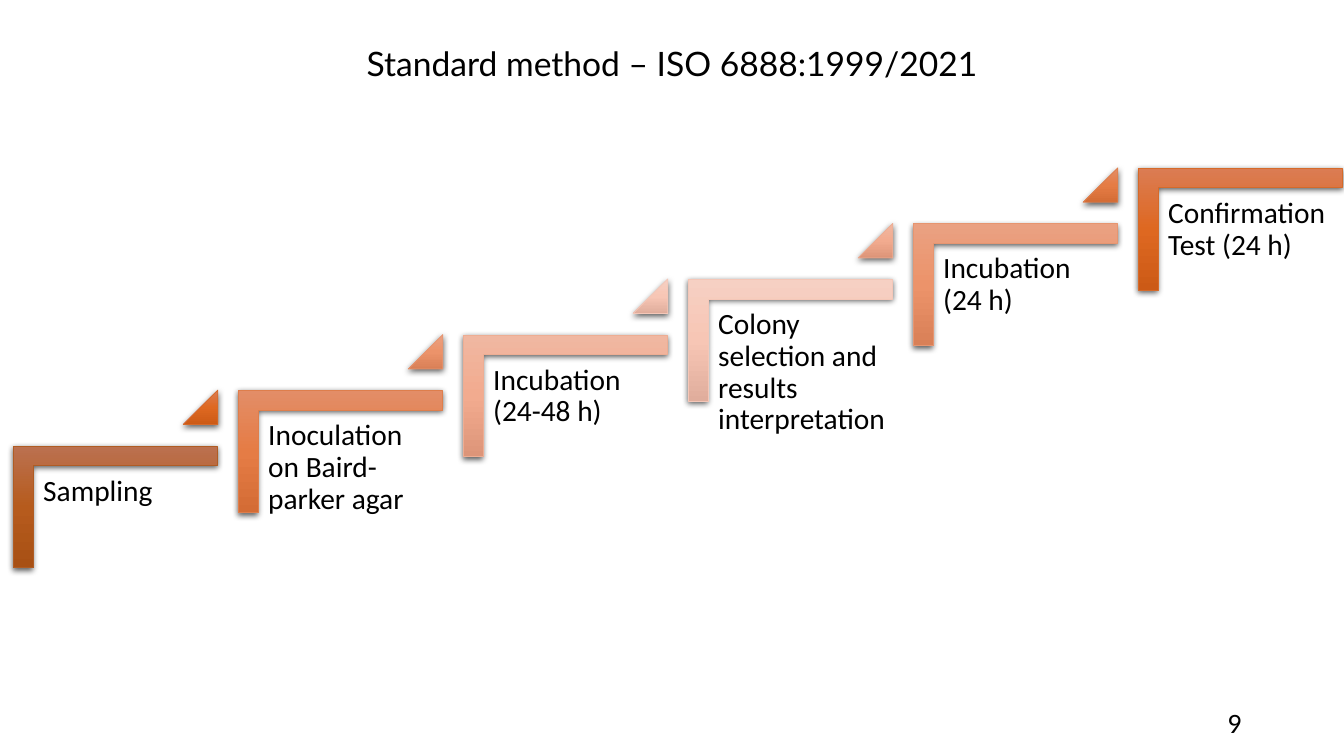
from dataclasses import dataclass

from pptx import Presentation
from pptx import util as u
from pptx.dml.color import RGBColor
from pptx.enum import shapes, text
from pptx.oxml import parse_xml
from pptx.oxml.ns import nsdecls, qn


@dataclass(frozen=True)
class Theme:
    ink: str = "000000"
    title_font: str = "Lato"
    body_font: str = "Calibri"
    title_size: int = 24
    step_size: int = 21
    number_size: int = 20
    # gradient top, middle, bottom, then outline
    tones: tuple = (
        ("BB7150", "B65B1D", "A85014", "AF5C24"),
        ("DB7C53", "DE6821", "CC5A16", "D56A2A"),
        ("E38D67", "E57C45", "D46C35", "DE7E4C"),
        ("EAA182", "EC936A", "D98057", "E69570"),
        ("F0B7A1", "F2AB8F", "DD9579", "EDAD93"),
        ("F6D0C3", "F7C6B5", "E0AD9C", "F4C7B8"),
    )


def set_all(target, values):
    for name, value in values.items():
        setattr(target, name, value)


class StepSlide:
    """Draws themed elements on one blank slide; lengths are in centimetres."""

    def __init__(self, deck, theme):
        self.theme = theme
        self.page = deck.slides.add_slide(deck.slide_layouts[6])

    def label(self, words, place, size, font, frame_format=None, para_format=None):
        box = self.page.shapes.add_textbox(*map(u.Cm, place))
        frame = box.text_frame
        set_all(frame, {"word_wrap": True, **(frame_format or {})})
        para = frame.paragraphs[0]
        set_all(para, para_format or {})
        span = para.add_run()
        span.text = words
        set_all(span.font, {"size": u.Pt(size), "name": font})
        span.font.color.rgb = RGBColor.from_string(self.theme.ink)

    def shaded(self, kind, place, tone, adjustments, rotation=0):
        """Add a shape with a vertical gradient, thin outline and soft shadow."""
        shape = self.page.shapes.add_shape(kind, *map(u.Cm, place))
        shape.rotation = rotation
        for index, value in enumerate(adjustments):
            shape.adjustments[index] = value
        *stops, outline = tone
        shape.line.color.rgb = RGBColor.from_string(outline)
        shape.line.width = u.Pt(0.5)
        shape.fill.gradient()
        shape.shadow.inherit = False
        properties = shape._element.spPr
        stop_xml = "".join(
            f'<a:gs pos="{index * 50000}"><a:srgbClr val="{color}"/></a:gs>'
            for index, color in enumerate(stops))
        properties.replace(properties.find(qn("a:gradFill")), parse_xml(
            f'<a:gradFill {nsdecls("a")} rotWithShape="0"><a:gsLst>{stop_xml}</a:gsLst>'
            '<a:lin ang="5400000" scaled="0"/></a:gradFill>'))
        properties.find(qn("a:effectLst")).append(parse_xml(
            f'<a:outerShdw {nsdecls("a")} blurRad="{u.Pt(4.5)}" dist="{u.Pt(1.5)}" '
            'dir="5400000" algn="ctr" rotWithShape="0"><a:srgbClr val="000000">'
            '<a:alpha val="63000"/></a:srgbClr></a:outerShdw>'))

    def staircase(self, steps):
        """Climb from lower left; tones lighten to the middle and darken again."""
        theme = self.theme
        tones = theme.tones + theme.tones[:0:-1]
        inset = u.Cm(0.23)
        margins = {f"margin_{side}": inset for side in ("left", "top", "right", "bottom")}
        for index, (words, width) in enumerate(steps):
            across, up = 5.67 * index, 1.4 * index
            self.shaded(shapes.MSO_SHAPE.CORNER, (1.37 + across, 10.21 - up, 3.07, 5.13),
                        tones[2 * index], (0.161, 0.161), rotation=90)
            self.label(words, (0.86 + across, 11.76 - up, width, 4.06),
                       theme.step_size, theme.body_font, margins, {"line_spacing": 0.9})
            if index < len(steps) - 1:
                self.shaded(shapes.MSO_SHAPE.ISOSCELES_TRIANGLE,
                            (4.62 + across, 9.83 - up, 0.87, 0.87),
                            tones[2 * index + 1], (1,))


def main():
    deck = Presentation()
    set_all(deck, {"slide_width": u.Cm(33.87), "slide_height": u.Cm(19.05)})
    theme = Theme()
    slide = StepSlide(deck, theme)
    slide.label("Standard method – ISO 6888:1999/2021", (2.33, 0.36, 29.21, 2.59),
                theme.title_size, theme.title_font,
                {"vertical_anchor": text.MSO_ANCHOR.MIDDLE},
                {"alignment": text.PP_ALIGN.CENTER, "line_spacing": 0.9})
    slide.staircase([
        ("Sampling", 4.62),
        ("Inoculation on Baird-parker agar", 4.62),
        ("Incubation (24-48 h)", 4.62),
        ("Colony selection and results interpretation", 5.05),
        ("Incubation (24 h)", 4.62),
        ("Confirmation Test (24 h)", 4.62),
    ])
    slide.label("9", (23.92, 17.66, 7.62, 1.01), theme.number_size, theme.body_font,
                para_format={"alignment": text.PP_ALIGN.RIGHT})
    deck.save("out.pptx")


if __name__ == "__main__":
    main()
